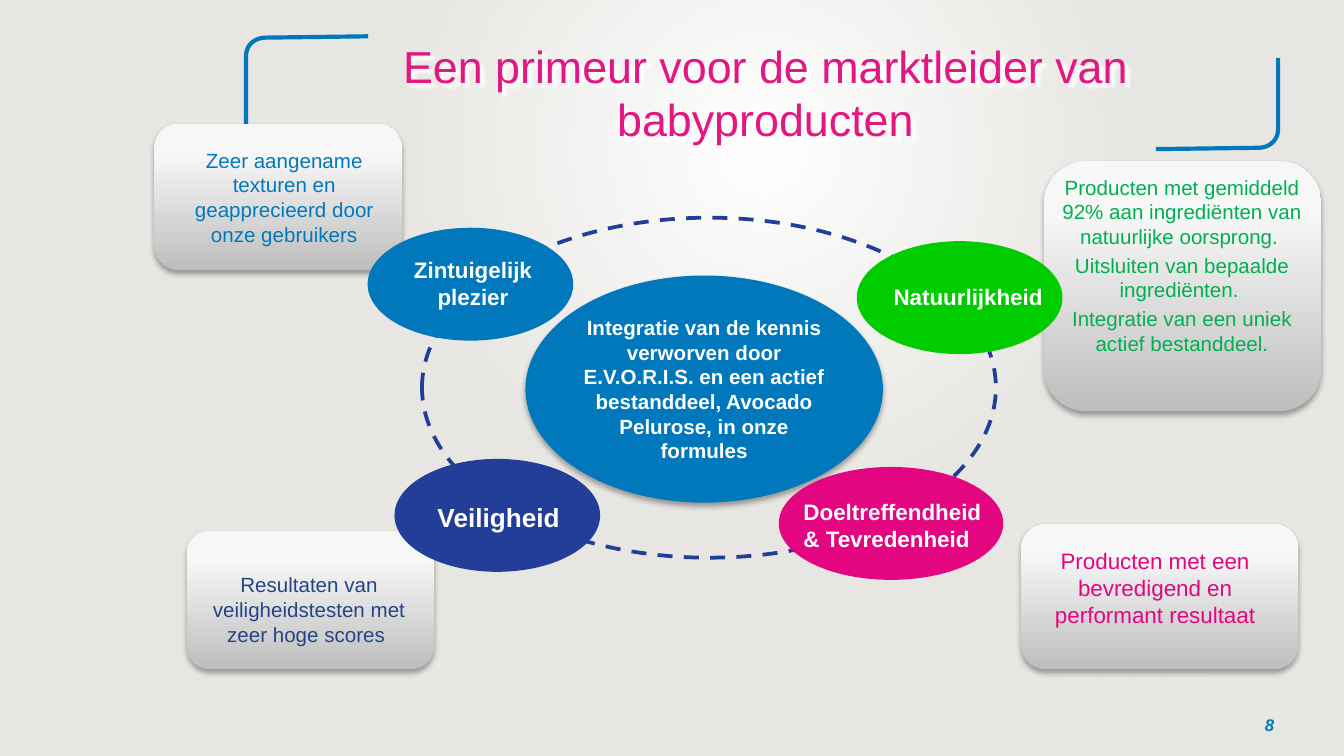
from dataclasses import dataclass

import pptx
import pptx.dml.color
import pptx.enum.dml
import pptx.enum.shapes
import pptx.enum.text
import pptx.oxml
import pptx.oxml.ns
import pptx.util

Inches = pptx.util.Inches
Pt = pptx.util.Pt
SHAPE = pptx.enum.shapes.MSO_SHAPE
ALIGN = pptx.enum.text.PP_ALIGN
ANCHOR = pptx.enum.text.MSO_ANCHOR

BLUE, NAVY, GREEN, PINK = "0178BC", "233E98", "00CC00", "E40580"
WHITE = "FFFFFF"
Box = tuple[float, float, float, float]  # left, top, width, height


@dataclass
class Card:
    box: Box
    text_box: Box
    paragraphs: list[str]
    color: str
    size: int = 11
    inset: tuple[float, float] = (0.08, 0)


@dataclass
class Theme:
    box: Box
    label_box: Box
    label: str
    color: str
    size: int = 12
    align: ALIGN = ALIGN.CENTER


def rgb(color: str):
    return pptx.dml.color.RGBColor.from_string(color)


def add_shape(kind, box: Box, fill: str = "", line: str = "", width: float = 0.75):
    shape = slide.shapes.add_shape(kind, *map(Inches, box))
    shape.shadow.inherit = False
    if fill:
        shape.fill.solid()
        shape.fill.fore_color.rgb = rgb(fill)
    else:
        shape.fill.background()
    if line:
        shape.line.color.rgb = rgb(line)
        shape.line.width = Pt(width)
    else:
        shape.line.fill.background()
    return shape


def set_gradient(shape, stops: list[tuple[int, str, int]], direction: str) -> None:
    """Replace an empty fill by stops of (position %, colour, opacity %)."""
    marks = "".join(
        f'<a:gs pos="{pos * 1000}"><a:srgbClr val="{color}">'
        f'<a:alpha val="{opacity * 1000}"/></a:srgbClr></a:gs>'
        for pos, color, opacity in stops)
    gradient = pptx.oxml.parse_xml(
        f'<a:gradFill {pptx.oxml.ns.nsdecls("a")} rotWithShape="1">'
        f'<a:gsLst>{marks}</a:gsLst>{direction}</a:gradFill>')
    properties = shape._element.spPr
    properties.replace(properties.find(pptx.oxml.ns.qn("a:noFill")), gradient)


def set_shadow(shape, color: str, opacity: int, blur: float, distance: float, angle: int) -> None:
    shape.shadow.inherit = False
    effects = shape._element.spPr.find(pptx.oxml.ns.qn("a:effectLst"))
    effects.append(pptx.oxml.parse_xml(
        f'<a:outerShdw {pptx.oxml.ns.nsdecls("a")} blurRad="{Pt(blur)}" dist="{Pt(distance)}" '
        f'dir="{angle * 60000}" algn="ctr" rotWithShape="0"><a:srgbClr val="{color}">'
        f'<a:alpha val="{opacity * 1000}"/></a:srgbClr></a:outerShdw>'))


def write(shape, paragraphs: list[str], size: int, color: str, align=ALIGN.CENTER,
          anchor=ANCHOR.TOP, inset=(0.1, 0.05), bold=False, italic=False) -> None:
    frame = shape.text_frame
    frame.word_wrap = True
    frame.vertical_anchor = anchor
    frame.margin_left = frame.margin_right = Inches(inset[0])
    frame.margin_top = frame.margin_bottom = Inches(inset[1])
    frame.text = "\n".join(paragraphs)
    for index, paragraph in enumerate(frame.paragraphs):
        paragraph.alignment = align
        if index:
            paragraph.space_before = Pt(0.2 * size)
        font = paragraph.font
        font.name, font.size = "Arial", Pt(size)
        font.bold, font.italic = bold, italic
        font.color.rgb = rgb(color)


def add_text(box: Box, paragraphs: list[str], size: int, color: str, **style):
    text_box = slide.shapes.add_textbox(*map(Inches, box))
    write(text_box, paragraphs, size, color, **style)
    return text_box


def add_bracket(points: list[tuple[float, float]]) -> None:
    start, *rest = [(Inches(x), Inches(y)) for x, y in points]
    builder = slide.shapes.build_freeform(*start)
    builder.add_line_segments(rest, close=False)
    bracket = builder.convert_to_shape()
    bracket.shadow.inherit = False
    bracket.fill.background()
    bracket.line.color.rgb = rgb(BLUE)
    bracket.line.width = Pt(2.25)


def curve(ends: list[tuple[float, float]], steps: int = 12) -> list[tuple[float, float]]:
    """Points along a cubic Bezier curve."""
    def at(t: float, axis: int) -> float:
        a, b, c, d = (point[axis] for point in ends)
        u = 1 - t
        return a * u**3 + 3 * b * u * u * t + 3 * c * u * t * t + d * t**3
    return [(at(i / steps, 0), at(i / steps, 1)) for i in range(steps + 1)]


def add_card(card: Card) -> None:
    panel = add_shape(SHAPE.ROUNDED_RECTANGLE, card.box)
    set_gradient(panel, [(0, "BEBEBE", 100), (80, "F7F7F7", 100), (100, "F8F8F8", 100)],
                 '<a:lin ang="16200000" scaled="0"/>')
    set_shadow(panel, "000000", 35, 3.1, 1.8, 90)
    add_text(card.text_box, card.paragraphs, card.size, card.color, inset=card.inset)


# Slide in 16:9
presentation = pptx.Presentation()
presentation.slide_width = Inches(10)
presentation.slide_height = Inches(10 * 9 / 16)
slide = presentation.slides.add_slide(presentation.slide_layouts[6])

# Background with a soft white glow
slide.background.fill.solid()
slide.background.fill.fore_color.rgb = rgb("E7E6E2")
glow = add_shape(SHAPE.ROUNDED_RECTANGLE, (1.83, -1.37, 7.68, 4.98))
glow.adjustments[0] = 0.13
set_gradient(glow, [(0, WHITE, 100), (60, WHITE, 0)],
             '<a:path path="circle"><a:fillToRect l="50000" t="50000" r="50000" b="50000"/></a:path>')

# Corner brackets: the right one is the left one turned half round
left_bracket = [(1.83, 0.95),
                *curve([(1.83, 0.42), (1.83, 0.34), (1.89, 0.28), (1.98, 0.28)]),
                (2.74, 0.27)]
add_bracket(left_bracket)
add_bracket([(11.34 - x, 1.38 - y) for x, y in left_bracket])

# Title
title = add_text((1.83, 0.33, 7.73, 0.71), ["Een primeur voor de marktleider van babyproducten"],
                 24, "E31781", anchor=ANCHOR.MIDDLE)
set_shadow(title, WHITE, 100, 1, 3, 45)

# Explanation cards
for card in [
    Card((1.39, 3.95, 1.84, 1.03), (1.45, 4.26, 1.7, 0.55),
         ["Resultaten van veiligheidstesten met zeer hoge scores "], "234586"),
    Card((7.6, 3.9, 2.06, 1.08), (7.65, 4.07, 1.89, 0.6),
         ["Producten met een bevredigend en performant resultaat"], PINK, size=12),
    Card((1.15, 0.92, 1.84, 1.09), (1.29, 1.05, 1.65, 0.84),
         ["Zeer aangename texturen en geapprecieerd door onze gebruikers"], BLUE,
         inset=(0.1, 0.05)),
    Card((7.77, 1.2, 2.06, 1.86), (7.82, 1.3, 1.95, 1.67),
         ["Producten met gemiddeld 92% aan ingrediënten van natuurlijke oorsprong. ",
          "Uitsluiten van bepaalde ingrediënten. ",
          "Integratie van een uniek actief bestanddeel."], "00B050"),
]:
    add_card(card)

# Core message
core = add_shape(SHAPE.OVAL, (3.91, 2.05, 2.66, 1.69), BLUE)
set_shadow(core, "000000", 35, 3.1, 1.8, 90)
write(core, ["Integratie van de kennis verworven door E.V.O.R.I.S. en een actief "
             "bestanddeel, Avocado Pelurose, in onze formules"],
      11, WHITE, anchor=ANCHOR.MIDDLE, inset=(0.04, 0), bold=True)

# Page number
add_text((7.25, 5.24, 2.33, 0.3), ["8"], 9, BLUE, align=ALIGN.RIGHT,
         anchor=ANCHOR.MIDDLE, bold=True, italic=True)

# Dashed orbit with the four themes
orbit = add_shape(SHAPE.OVAL, (3.14, 1.62, 4.27, 2.53), line=NAVY, width=2)
orbit.line.dash_style = pptx.enum.dml.MSO_LINE.DASH
themes = [
    Theme((2.74, 1.7, 1.52, 0.83), (2.94, 1.86, 1.16, 0.5), "Zintuigelijk plezier", BLUE),
    Theme((2.94, 3.42, 1.52, 0.83), (3.12, 3.68, 1.18, 0.33), "Veiligheid", NAVY, size=14),
    Theme((6.38, 1.8, 1.52, 0.83), (6.55, 2.06, 1.32, 0.3), "Natuurlijkheid", GREEN,
          align=ALIGN.LEFT),
    Theme((5.8, 3.48, 1.66, 0.83), (5.88, 3.66, 1.55, 0.5),
          "Doeltreffendheid\v& Tevredenheid", PINK, align=ALIGN.LEFT),
]
for theme in themes:
    add_shape(SHAPE.OVAL, theme.box, theme.color, theme.color)
for theme in themes:
    add_text(theme.label_box, [theme.label], theme.size, WHITE, align=theme.align, bold=True)

presentation.save("out.pptx")
